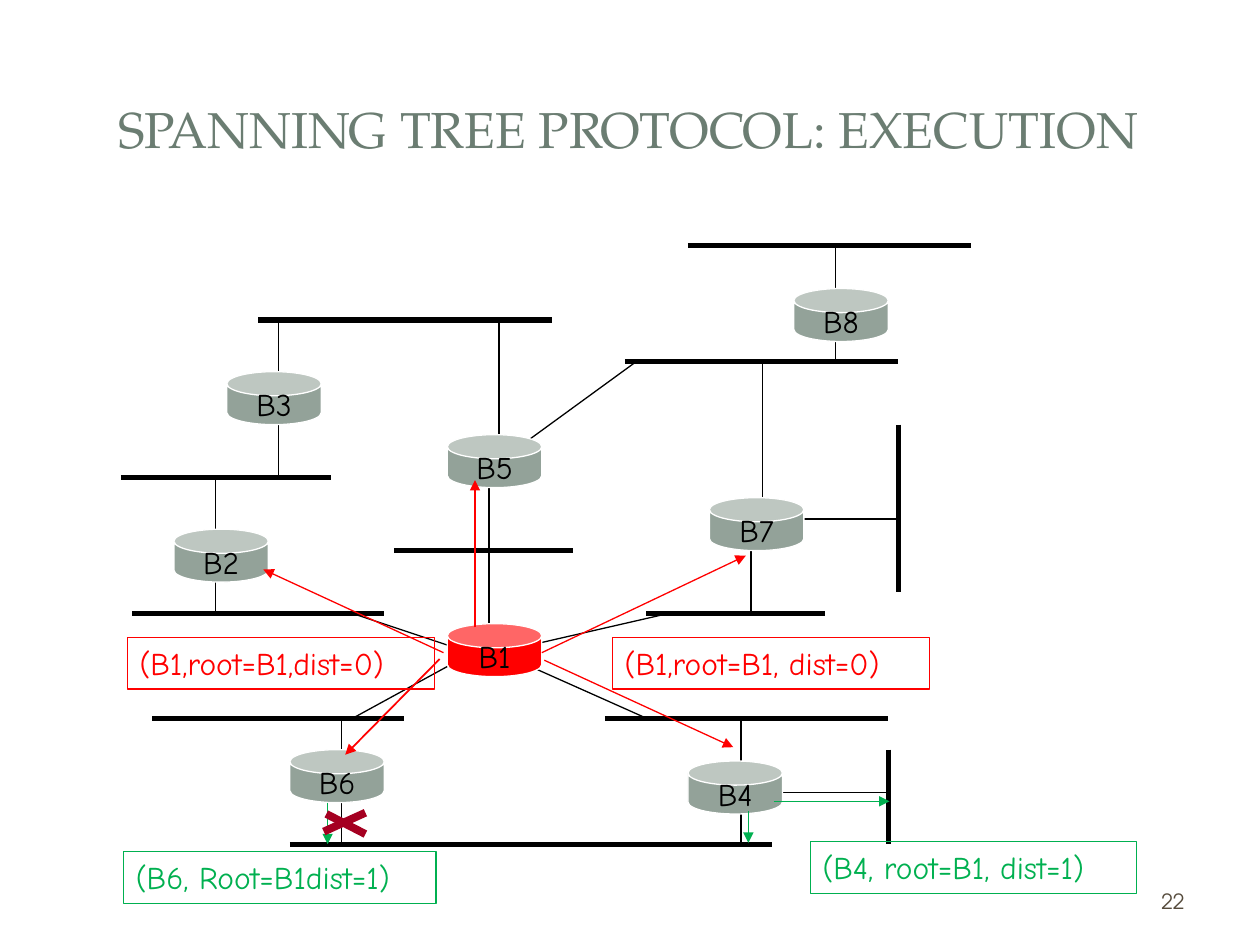
import pptx
import pptx.util
from pptx.dml.color import RGBColor
from pptx.enum.shapes import MSO_CONNECTOR, MSO_SHAPE
from pptx.enum.text import MSO_ANCHOR, MSO_AUTO_SIZE, PP_ALIGN
from pptx.oxml.ns import qn
from pptx.util import Inches
from lxml import etree

# Content
TITLE = "SPANNING TREE PROTOCOL: EXECUTION"
PAGE_NUMBER = "22"
BLACK, RED, GREEN, GREY, CROSS = "000000", "FF0000", "00B050", "93A299", "A50021"
BODY_FONT = "Comic Neue"
BRIDGE_WIDTH, BRIDGE_HEIGHT = 0.75, 0.42
LABEL_HEIGHT = 0.41

# Horizontal segments: left, right, y
HORIZONTAL_SEGMENTS = [
    (5.46, 7.71, 1.95), (2.05, 4.38, 2.54), (4.96, 7.13, 2.87),
    (0.96, 2.63, 3.79), (3.13, 4.55, 4.37), (1.05, 3.05, 4.87),
    (5.13, 6.55, 4.87), (1.21, 3.21, 5.7), (4.8, 7.05, 5.7),
    (2.3, 6.13, 6.7),
]
# Vertical segments: x, top, bottom
VERTICAL_SEGMENTS = [(7.13, 3.37, 4.7), (7.05, 5.95, 6.7)]

# Links between bridges and segments: x1, y1, x2, y2
LINKS = [
    (2.21, 2.54, 2.21, 2.95), (2.21, 3.2, 2.21, 3.79),
    (1.71, 3.79, 1.71, 4.2), (1.71, 4.45, 1.71, 4.87),
    (3.96, 2.54, 3.96, 3.45), (4.13, 3.54, 5.05, 2.87),
    (3.88, 3.87, 3.88, 4.37), (3.88, 4.37, 3.88, 4.95),
    (6.05, 2.87, 6.05, 3.95), (5.96, 4.37, 5.96, 4.87),
    (6.38, 4.12, 7.13, 4.12), (2.8, 4.87, 3.55, 5.12),
    (2.8, 5.7, 3.55, 5.29), (4.21, 5.12, 5.3, 4.87),
    (4.21, 5.29, 5.13, 5.7), (2.71, 5.7, 2.71, 5.95),
    (2.71, 6.37, 2.71, 6.7), (5.88, 5.7, 5.88, 6.04),
    (5.88, 6.45, 5.88, 6.7), (6.13, 6.29, 7.05, 6.29),
    (6.63, 1.95, 6.63, 2.29), (6.63, 2.7, 6.63, 2.87),
]
# Bridges: name, left, top, fill
BRIDGES = [
    ("B3", 1.8, 2.95, GREY), ("B5", 3.55, 3.45, GREY),
    ("B7", 5.63, 3.95, GREY), ("B2", 1.38, 4.2, GREY),
    ("B1", 3.55, 4.95, RED), ("B6", 2.3, 5.95, GREY),
    ("B4", 5.46, 6.04, GREY), ("B8", 6.3, 2.29, GREY),
]
# Messages: start, end, colour, width
MESSAGES = [
    (3.49, 5.23, 2.74, 5.99, RED, 1), (3.52, 5.18, 2.09, 4.52, RED, 0.75),
    (4.3, 5.18, 5.92, 4.41, RED, 0.75), (4.32, 5.24, 5.82, 5.93, RED, 0.75),
    (3.77, 4.98, 3.77, 3.81, RED, 0.75), (6.14, 6.36, 7.06, 6.36, GREEN, 0.75),
    (5.94, 6.44, 5.94, 6.69, GREEN, 0.75), (2.6, 6.37, 2.6, 6.7, GREEN, 0.75),
]
# Message labels: text, left, top, width, colour
LABELS = [
    ("(B1,root=B1, dist=0)", 4.86, 5.06, 2.52, RED),
    ("(B1,root=B1,dist=0)", 1.01, 5.06, 2.44, RED),
    ("(B4, root=B1, dist=1)", 6.43, 6.68, 2.59, GREEN),
    ("(B6, Root=B1dist=1)", 0.98, 6.76, 2.48, GREEN),
]
CROSS_STROKES = [(2.59, 6.46, 2.9, 6.62), (2.57, 6.6, 2.9, 6.45)]


def colour(value):
    return RGBColor.from_string(value)


def write(shape, text, size, font, text_colour, align, anchor):
    frame = shape.text_frame
    frame.text = text
    frame.vertical_anchor = anchor
    paragraph = frame.paragraphs[0]
    paragraph.alignment = align
    run_font = paragraph.runs[0].font
    run_font.size = pptx.util.Pt(size)
    run_font.name = font
    run_font.color.rgb = colour(text_colour)


def add_line(slide, x1, y1, x2, y2, line_colour=BLACK, width=0.75, arrow=False):
    connector = slide.shapes.add_connector(
        MSO_CONNECTOR.STRAIGHT, Inches(x1), Inches(y1), Inches(x2), Inches(y2))
    connector.line.color.rgb = colour(line_colour)
    connector.line.width = pptx.util.Pt(width)
    if arrow:
        line_xml = connector.line._get_or_add_ln()
        etree.SubElement(line_xml, qn("a:tailEnd"), type="triangle")
    etree.SubElement(connector._element.spPr, qn("a:effectLst"))


def add_shape(slide, kind, left, top, width, height, line_colour):
    shape = slide.shapes.add_shape(
        kind, Inches(left), Inches(top), Inches(width), Inches(height))
    shape.shadow.inherit = False
    shape.line.color.rgb = colour(line_colour)
    shape.line.width = pptx.util.Pt(0.75)
    return shape


def add_bridge(slide, name, left, top, fill):
    bridge = add_shape(slide, MSO_SHAPE.CAN, left, top,
                       BRIDGE_WIDTH, BRIDGE_HEIGHT, "FFFFFF")
    bridge.adjustments[0] = 0.455
    bridge.fill.solid()
    bridge.fill.fore_color.rgb = colour(fill)
    bridge.text_frame.word_wrap = False
    write(bridge, name, 18, BODY_FONT, BLACK, PP_ALIGN.CENTER, MSO_ANCHOR.MIDDLE)


def add_label(slide, text, left, top, width, label_colour):
    label = add_shape(slide, MSO_SHAPE.RECTANGLE, left, top,
                      width, LABEL_HEIGHT, label_colour)
    label.fill.background()
    label.text_frame.word_wrap = True
    label.text_frame.auto_size = MSO_AUTO_SIZE.NONE
    write(label, text, 18, BODY_FONT, label_colour, PP_ALIGN.LEFT, MSO_ANCHOR.TOP)


def main():
    presentation = pptx.Presentation()
    presentation.slide_width, presentation.slide_height = Inches(10), Inches(7.5)
    slide = presentation.slides.add_slide(presentation.slide_layouts[5])

    # Title and page number
    title = slide.shapes.title
    title.left, title.top = Inches(0.47), Inches(0.45)
    title.width, title.height = Inches(9.03), Inches(1.14)
    write(title, TITLE, 28.8, "TeX Gyre Pagella", "6B7D72",
          PP_ALIGN.CENTER, MSO_ANCHOR.MIDDLE)
    number = slide.shapes.add_textbox(
        Inches(7.17), Inches(6.95), Inches(2.33), Inches(0.4))
    number.text_frame.word_wrap = True
    write(number, PAGE_NUMBER, 12, "TeX Gyre Adventor", "564B3C",
          PP_ALIGN.RIGHT, MSO_ANCHOR.MIDDLE)

    # Network segments and links
    for left, right, y in HORIZONTAL_SEGMENTS:
        add_line(slide, left, y, right, y, width=3)
    for x, top, bottom in VERTICAL_SEGMENTS:
        add_line(slide, x, top, x, bottom, width=3)
    for link in LINKS:
        add_line(slide, *link)

    # Bridges, with messages and labels on top
    for bridge in BRIDGES:
        add_bridge(slide, *bridge)
    for message in MESSAGES:
        add_line(slide, *message, arrow=True)
    for label in LABELS:
        add_label(slide, *label)

    # Cross on the blocked port
    for stroke in CROSS_STROKES:
        add_line(slide, *stroke, CROSS, 4.5)

    presentation.save("out.pptx")


if __name__ == "__main__":
    main()
